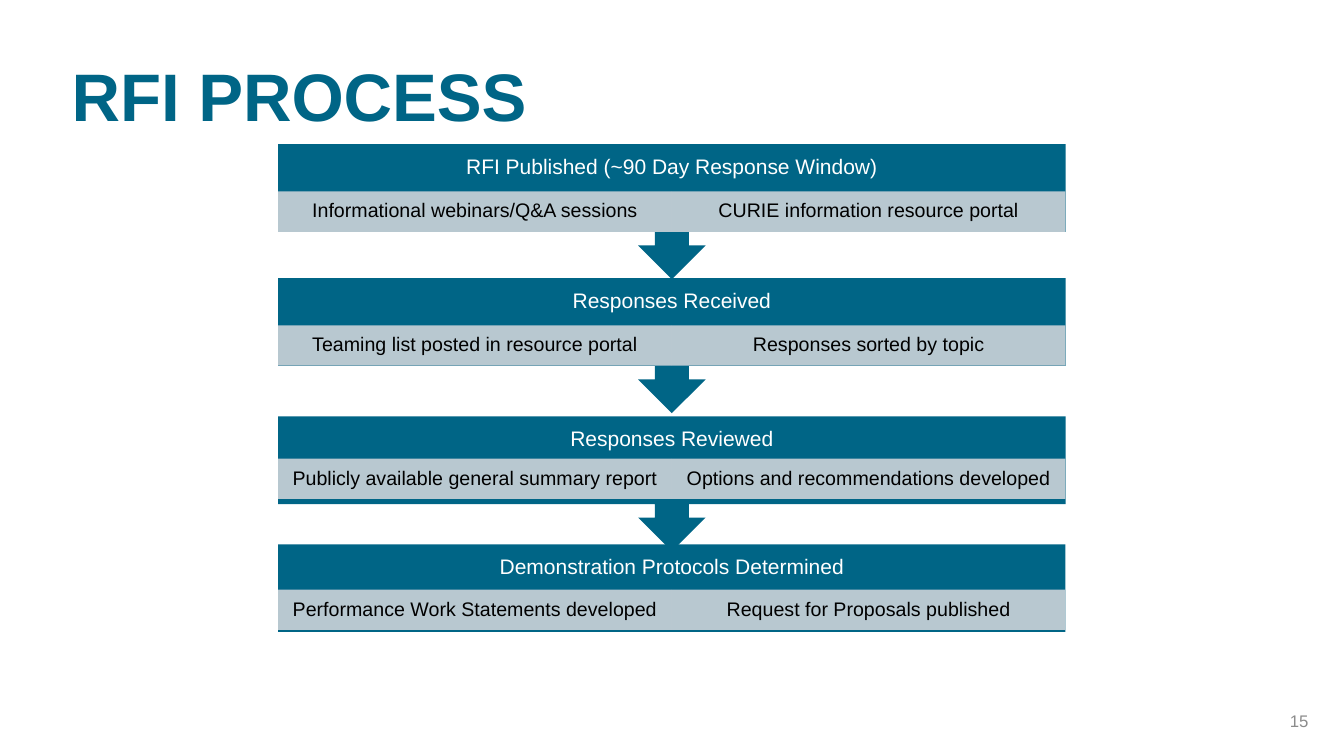
from dataclasses import dataclass

from lxml.etree import SubElement
from pptx import Presentation
from pptx.dml.color import RGBColor
from pptx.enum.shapes import MSO_SHAPE as Preset
from pptx.enum.text import MSO_ANCHOR as Anchor, PP_ALIGN as Align
from pptx.oxml.ns import qn
from pptx.shapes.autoshape import Shape
from pptx.slide import Slide
from pptx.util import Pt

COLORS = {
    "teal": "006586",
    "mist": "CCD3D9",
    "white": "FFFFFF",
    "black": "000000",
    "gray": "8C8C8C",
}
FONT = "Arial"
LEFT = 198.7
WIDTH = 562.4
HEADING_HEIGHT = 33.8
DETAIL_HEIGHT = 28.8
DETAIL_OPACITY = 90


@dataclass
class Stage:
    heading: str
    details: tuple[str, str]
    top: float
    detail_offset: float = 33.8
    height: float = 96.4
    preset: Preset = Preset.UP_ARROW_CALLOUT
    rotation: float = 180


STAGES = [
    Stage(
        "RFI Published (~90 Day Response Window)",
        ("Informational webinars/Q&A sessions", "CURIE information resource portal"),
        top=103,
    ),
    Stage(
        "Responses Received",
        ("Teaming list posted in resource portal", "Responses sorted by topic"),
        top=198.7,
    ),
    Stage(
        "Responses Reviewed",
        ("Publicly available general summary report", "Options and recommendations developed"),
        top=297.4,
        detail_offset=30.2,
    ),
    Stage(
        "Demonstration Protocols Determined",
        ("Performance Work Statements developed", "Request for Proposals published"),
        top=388.8,
        detail_offset=32.4,
        height=62.6,
        preset=Preset.RECTANGLE,
        rotation=0,
    ),
]


def color(name: str) -> RGBColor:
    return RGBColor.from_string(COLORS[name])


def write(
    shape: Shape,
    text: str,
    size: float,
    ink: str,
    align: Align = Align.CENTER,
    anchor: Anchor = Anchor.MIDDLE,
    margins: tuple[float, float] = (7.2, 3.6),
    spacing: float = 0.9,
    bold: bool = False,
) -> None:
    frame = shape.text_frame
    frame.text = text
    frame.word_wrap = True
    frame.vertical_anchor = anchor
    frame.margin_left = frame.margin_right = Pt(margins[0])
    frame.margin_top = frame.margin_bottom = Pt(margins[1])
    para = frame.paragraphs[0]
    para.alignment = align
    para.line_spacing = spacing
    font = para.runs[0].font
    font.name = FONT
    font.size = Pt(size)
    font.bold = bold
    font.color.rgb = color(ink)


def add_block(
    page: Slide, preset: Preset, left: float, top: float, width: float, height: float, fill: str
) -> Shape:
    block = page.shapes.add_shape(preset, Pt(left), Pt(top), Pt(width), Pt(height))
    block.shadow.inherit = False
    block.fill.solid()
    block.fill.fore_color.rgb = color(fill)
    block.line.fill.background()
    return block


def set_opacity(block: Shape, percent: int) -> None:
    tint = block.fill._xPr.find(qn("a:solidFill"))[0]
    SubElement(tint, qn("a:alpha")).set("val", str(percent * 1000))


def add_stage(page: Slide, stage: Stage) -> None:
    body = add_block(page, stage.preset, LEFT, stage.top, WIDTH, stage.height, "teal")
    body.rotation = stage.rotation
    heading = page.shapes.add_textbox(Pt(LEFT), Pt(stage.top), Pt(WIDTH), Pt(HEADING_HEIGHT))
    write(heading, stage.heading, 15, "white", margins=(8.4, 8.4))
    column = WIDTH / len(stage.details)
    for index, text in enumerate(stage.details):
        detail = add_block(
            page,
            Preset.RECTANGLE,
            LEFT + index * column,
            stage.top + stage.detail_offset,
            column,
            DETAIL_HEIGHT,
            "mist",
        )
        set_opacity(detail, DETAIL_OPACITY)
        write(detail, text, 14, "black", margins=(7.8, 1.4))


def add_title(page: Slide, text: str) -> None:
    title = page.shapes.title
    title.left, title.top, title.width, title.height = Pt(51.1), Pt(44.6), Pt(868.3), Pt(52.6)
    write(title, text, 48, "teal", Align.LEFT, Anchor.BOTTOM, margins=(0, 0), bold=True)


def add_page_number(page: Slide, number: str) -> None:
    box = page.shapes.add_textbox(Pt(725.8), Pt(500.4), Pt(216), Pt(28.8))
    write(box, number, 12, "gray", Align.RIGHT, spacing=1.0)


def main() -> None:
    deck = Presentation()
    deck.slide_width, deck.slide_height = Pt(960), Pt(540)
    page = deck.slides.add_slide(deck.slide_layouts[5])
    add_title(page, "RFI PROCESS")
    add_page_number(page, "15")
    for stage in reversed(STAGES):
        add_stage(page, stage)
    deck.save("out.pptx")


if __name__ == "__main__":
    main()
